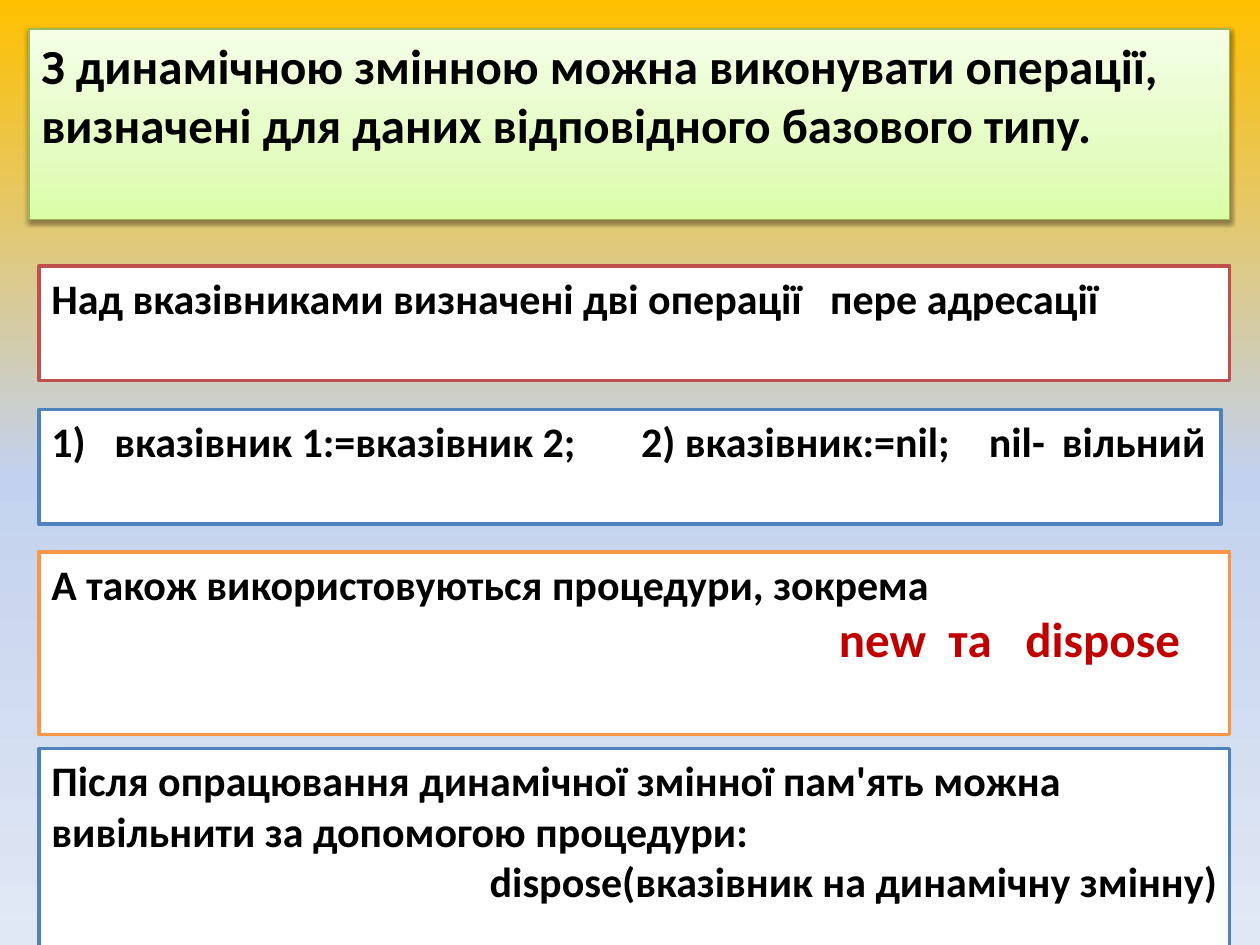
from dataclasses import dataclass

from lxml import etree
from pptx import Presentation
from pptx.dml.color import RGBColor
from pptx.enum.shapes import MSO_SHAPE
from pptx.enum.text import MSO_ANCHOR, PP_ALIGN
from pptx.oxml.ns import qn
from pptx.util import Inches, Pt

RECT = MSO_SHAPE.RECTANGLE
TOP = MSO_ANCHOR.TOP
LEFT, RIGHT = PP_ALIGN.LEFT, PP_ALIGN.RIGHT

BLACK = RGBColor(0x00, 0x00, 0x00)
WHITE = RGBColor(0xFF, 0xFF, 0xFF)
CRIMSON = RGBColor(0xC0, 0x00, 0x00)
RED = RGBColor(0xC0, 0x50, 0x4D)
BLUE = RGBColor(0x4F, 0x81, 0xBD)
ORANGE = RGBColor(0xF7, 0x96, 0x46)
GREEN = RGBColor(0x98, 0xB9, 0x55)
SKY = [(0, RGBColor(0xFF, 0xC0, 0x00)), (50, RGBColor(0xC2, 0xD1, 0xED)),
       (100, RGBColor(0xE1, 0xE8, 0xF5))]
LIME = [(0, RGBColor(0xDA, 0xFD, 0xA7)), (35, RGBColor(0xE4, 0xFC, 0xC2)),
        (100, RGBColor(0xF5, 0xFF, 0xE7))]


@dataclass
class Line:
    text: str
    size: int = 24
    color: RGBColor = BLACK
    align: PP_ALIGN = LEFT
    tabs: tuple[float, ...] = ()


@dataclass
class Box:
    left: float
    top: float
    width: float
    height: float
    edge: RGBColor
    lines: list[Line]
    weight: float = 2


HEAD = Box(0.23, 0.23, 9.53, 1.51, GREEN, [
    Line("З динамічною змінною можна виконувати операції, "
         "визначені для даних відповідного базового типу.", 28)], 0.75)
BOXES = [
    Box(0.31, 2.11, 9.45, 0.91, RED, [
        Line("Над вказівниками визначені дві операції\tпере адресації",
             tabs=(6.18,))]),
    Box(0.31, 3.25, 9.38, 0.91, BLUE, [
        Line("1)\tвказівник 1:=вказівник 2;\t2) вказівник:=nil;\tnil-\tвільний",
             tabs=(0.5, 4.68, 7.44, 8.02))]),
    Box(0.31, 4.38, 9.45, 1.45, ORANGE, [
        Line("А також використовуються процедури, зокрема"),
        Line("\tnew\tта\tdispose", 28, CRIMSON, tabs=(6.25, 7.12, 7.73))]),
    Box(0.31, 5.94, 9.45, 1.72, BLUE, [
        Line("Після опрацювання динамічної змінної пам'ять можна "
             "вивільнити за допомогою процедури:"),
        Line("dispose(вказівник на динамічну змінну)", align=RIGHT)]),
]


def blend(fill, root, stops: list, angle: int) -> None:
    """Fill with a linear gradient of any number of stops."""
    fill.gradient()
    fill.gradient_angle = angle
    group = next(root.iter(qn("a:gsLst")))
    for old in list(group):
        group.remove(old)
    for spot, color in stops:
        stop = etree.SubElement(group, qn("a:gs"), pos=str(spot * 1000))
        etree.SubElement(stop, qn("a:srgbClr"), val=str(color))


def cast(shape) -> None:
    """Drop a soft shadow straight down."""
    effects = next(shape._element.iter(qn("a:effectLst")))
    shade = etree.SubElement(effects, qn("a:outerShdw"), blurRad=str(Pt(3.1)),
                             dist=str(Pt(1.6)), dir="5400000", rotWithShape="0")
    color = etree.SubElement(shade, qn("a:srgbClr"), val=str(BLACK))
    etree.SubElement(color, qn("a:alpha"), val="38000")


def write(para, line: Line) -> None:
    para.text = line.text
    para.alignment = line.align
    if line.tabs:
        stops = etree.SubElement(para._p.get_or_add_pPr(), qn("a:tabLst"))
        for spot in line.tabs:
            etree.SubElement(stops, qn("a:tab"), pos=str(Inches(spot)), algn="l")
    font = para.font
    font.name, font.size, font.bold = "Calibri", Pt(line.size), True
    font.color.rgb = line.color


def draw(slide, box: Box):
    shape = slide.shapes.add_shape(RECT, Inches(box.left), Inches(box.top),
                                   Inches(box.width), Inches(box.height))
    shape.shadow.inherit = False
    shape.fill.solid()
    shape.fill.fore_color.rgb = WHITE
    shape.line.color.rgb = box.edge
    shape.line.width = Pt(box.weight)
    frame = shape.text_frame
    frame.word_wrap = True
    frame.vertical_anchor = TOP
    for i, line in enumerate(box.lines):
        write(frame.add_paragraph() if i else frame.paragraphs[0], line)
    return shape


def main() -> None:
    deck = Presentation()
    deck.slide_width, deck.slide_height = Inches(10), Inches(7.5)
    slide = deck.slides.add_slide(deck.slide_layouts[6])

    # Background
    blend(slide.background.fill, slide._element, SKY, 270)

    # Heading
    head = draw(slide, HEAD)
    blend(head.fill, head._element, LIME, 90)
    cast(head)

    # Framed notes
    for box in BOXES:
        draw(slide, box)

    deck.save("out.pptx")


if __name__ == "__main__":
    main()
